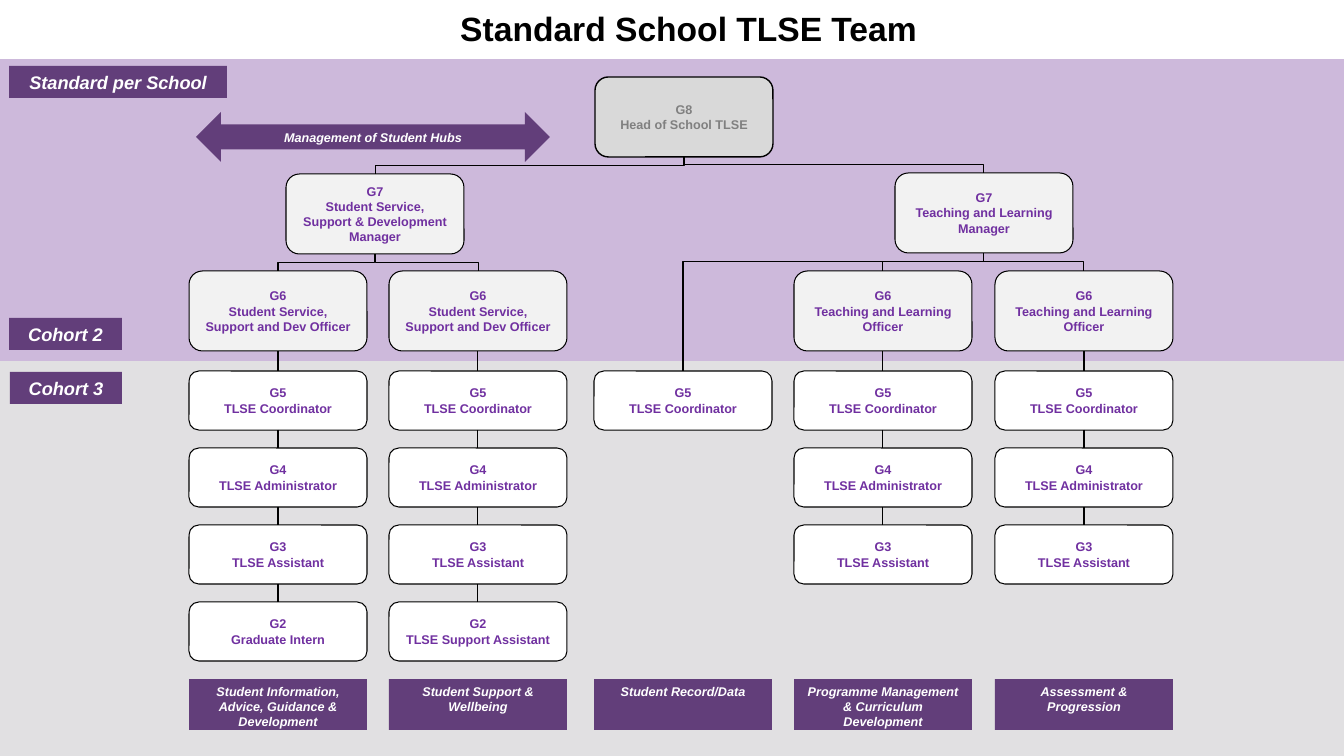
from copy import deepcopy
from itertools import pairwise

from pptx import Presentation
from pptx.dml.color import RGBColor
from pptx.enum.shapes import MSO_CONNECTOR, MSO_SHAPE
from pptx.enum.text import MSO_ANCHOR, PP_ALIGN
from pptx.oxml.ns import qn
from pptx.util import Pt

EMU_PER_PX = 914400 / 100.8
SLIDE_W, SLIDE_H = 1344, 756
TOP, BOTTOM = 0, 2  # connection sites

COLORS = {
    "lilac": "CDB9DB",
    "pale_grey": "E1E0E2",
    "plum": "623E7A",
    "head_fill": "D9D9D9",
    "head_text": "808080",
    "manager_fill": "F2F2F2",
    "violet": "7030A0",
    "white": "FFFFFF",
    "black": "000000",
}

TITLE_FONT = {"name": "Arial", "size": Pt(24), "bold": True, "italic": False}
ROLE_FONT = {"name": "Arial", "size": Pt(9), "bold": True, "italic": False}
CAPTION_FONT = {**ROLE_FONT, "italic": True}
TAG_FONT = {**CAPTION_FONT, "size": Pt(13)}

ROLE_W, SENIOR_H, JUNIOR_H = 178, 80, 59
OFFICER_Y, JUNIOR_Y, JUNIOR_PITCH = 271, 371, 77
CAPTION_Y, CAPTION_H = 679, 51

SUPPORT_OFFICER = "G6\nStudent Service, Support and Dev Officer"
TEACHING_OFFICER = "G6\nTeaching and Learning Officer"
JUNIORS = ["G5\vTLSE Coordinator", "G4\vTLSE Administrator", "G3\vTLSE Assistant"]

# left edge, officer, junior roles, caption
TEAMS = [
    (189, SUPPORT_OFFICER, JUNIORS + ["G2\vGraduate Intern"],
     "Student Information, Advice, Guidance & Development"),
    (389, SUPPORT_OFFICER, JUNIORS + ["G2\vTLSE Support Assistant"],
     "Student Support & Wellbeing"),
    (594, None, JUNIORS[:1], "Student Record/Data"),
    (794, TEACHING_OFFICER, JUNIORS, "Programme Management & Curriculum Development"),
    (995, TEACHING_OFFICER, JUNIORS, "Assessment & Progression"),
]

TAGS = [
    ("Standard per School", 9, 66, 218),
    ("Cohort 2", 9, 318, 113),
    ("Cohort 3", 10, 372, 112),
]


def px(length):
    return round(length * EMU_PER_PX)


def rgb(color):
    return RGBColor.from_string(COLORS[color])


def write(frame, text, font_format, color, anchor):
    frame.text = text
    frame.word_wrap = True
    frame.vertical_anchor = anchor
    for paragraph in frame.paragraphs:
        paragraph.alignment = PP_ALIGN.CENTER
        for run in paragraph.runs:
            for attribute, value in font_format.items():
                setattr(run.font, attribute, value)
            run.font.color.rgb = rgb(color)
        # a line break takes the height of the text beside it
        for line_break in paragraph._p.findall(qn("a:br")):
            line_break.insert(0, deepcopy(paragraph.runs[0]._r.rPr))


def add_block(slide, preset, box, fill):
    block = slide.shapes.add_shape(preset, *map(px, box))
    block.shadow.inherit = False
    block.fill.solid()
    block.fill.fore_color.rgb = rgb(fill)
    block.line.fill.background()
    return block


def add_label(slide, text, box, font_format, preset=MSO_SHAPE.RECTANGLE):
    label = add_block(slide, preset, box, "plum")
    write(label.text_frame, text, font_format, "white", MSO_ANCHOR.TOP)


def add_role(slide, text, x, y, height, fill, color="violet", outline=0.75):
    role = add_block(slide, MSO_SHAPE.ROUNDED_RECTANGLE, (x, y, ROLE_W, height), fill)
    role.line.color.rgb = rgb("black")
    role.line.width = Pt(outline)
    write(role.text_frame, text, ROLE_FONT, color, MSO_ANCHOR.MIDDLE)
    return role


def join(slide, senior, junior, kind=MSO_CONNECTOR.STRAIGHT):
    """Draw a line from the bottom of senior to the top of junior."""
    link = slide.shapes.add_connector(kind, 0, 0, 0, 0)
    link.begin_connect(senior, BOTTOM)
    link.end_connect(junior, TOP)
    link.line.color.rgb = rgb("black")
    link.line.width = Pt(0.75)
    properties = link._element.spPr
    properties.append(properties.makeelement(qn("a:effectLst"), {}))
    return link


def join_bent(slide, senior, junior, bend=0.5):
    """Join with a line that leaves downwards and turns at the share bend of its drop."""
    link = join(slide, senior, junior, MSO_CONNECTOR.ELBOW)
    drop, reach = link.height, link.width
    goes_right = link.end_x > link.begin_x
    center_x, center_y = link.left + reach // 2, link.top + drop // 2
    frame = {"left": center_x - drop // 2, "top": center_y - reach // 2,
             "width": drop, "height": reach}
    for attribute, value in frame.items():
        setattr(link, attribute, value)
    transform = link._element.spPr.find(qn("a:xfrm"))
    transform.set("rot", "16200000" if goes_right else "5400000")
    transform.set("flipH", "1" if goes_right else "0")
    guides = link._element.spPr.find(qn("a:prstGeom")).get_or_add_avLst()
    guide = {"name": "adj1", "fmla": f"val {round(bend * 100000)}"}
    guides.append(guides.makeelement(qn("a:gd"), guide))


def add_title(slide):
    title = slide.shapes.title
    frame = {"left": 12, "top": 1, "width": SLIDE_W, "height": 60}
    for attribute, value in frame.items():
        setattr(title, attribute, px(value))
    write(title.text_frame, " Standard School TLSE Team", TITLE_FONT, "black",
          MSO_ANCHOR.MIDDLE)
    title.text_frame.paragraphs[0].line_spacing = 0.9


def add_team(slide, manager, x, officer_text, junior_texts, caption):
    chain = []
    if officer_text:
        chain.append(add_role(slide, officer_text, x, OFFICER_Y, SENIOR_H, "manager_fill"))
    for row, text in enumerate(junior_texts):
        chain.append(add_role(slide, text, x, JUNIOR_Y + row * JUNIOR_PITCH,
                              JUNIOR_H, "white"))
    join_bent(slide, manager, chain[0], 0.5 if officer_text else 0.07)
    for senior, junior in pairwise(chain):
        join(slide, senior, junior)
    add_label(slide, caption, (x, CAPTION_Y, ROLE_W, CAPTION_H), CAPTION_FONT)


def main():
    deck = Presentation()
    deck.slide_width, deck.slide_height = px(SLIDE_W), px(SLIDE_H)
    slide = deck.slides.add_slide(deck.slide_layouts[5])

    add_title(slide)
    add_block(slide, MSO_SHAPE.RECTANGLE, (0, 59, SLIDE_W, 311), "lilac")
    add_block(slide, MSO_SHAPE.RECTANGLE, (0, 361, SLIDE_W, SLIDE_H - 361), "pale_grey")
    for text, x, y, width in TAGS:
        add_label(slide, text, (x, y, width, 32), TAG_FONT)
    add_label(slide, "Management of Student Hubs", (196, 112, 354, 50), CAPTION_FONT,
              MSO_SHAPE.LEFT_RIGHT_ARROW)

    head = add_role(slide, "G8\nHead of School TLSE", 595, 77, SENIOR_H,
                    "head_fill", "head_text", 1)
    support_manager = add_role(
        slide, "G7\nStudent Service, Support & Development Manager",
        286, 174, SENIOR_H, "manager_fill")
    teaching_manager = add_role(
        slide, "G7\nTeaching and Learning Manager", 895, 173, SENIOR_H, "manager_fill")
    for manager in (support_manager, teaching_manager):
        join_bent(slide, head, manager)

    managers = [support_manager] * 2 + [teaching_manager] * 3
    for manager, team in zip(managers, TEAMS):
        add_team(slide, manager, *team)

    deck.save("out.pptx")


if __name__ == "__main__":
    main()
